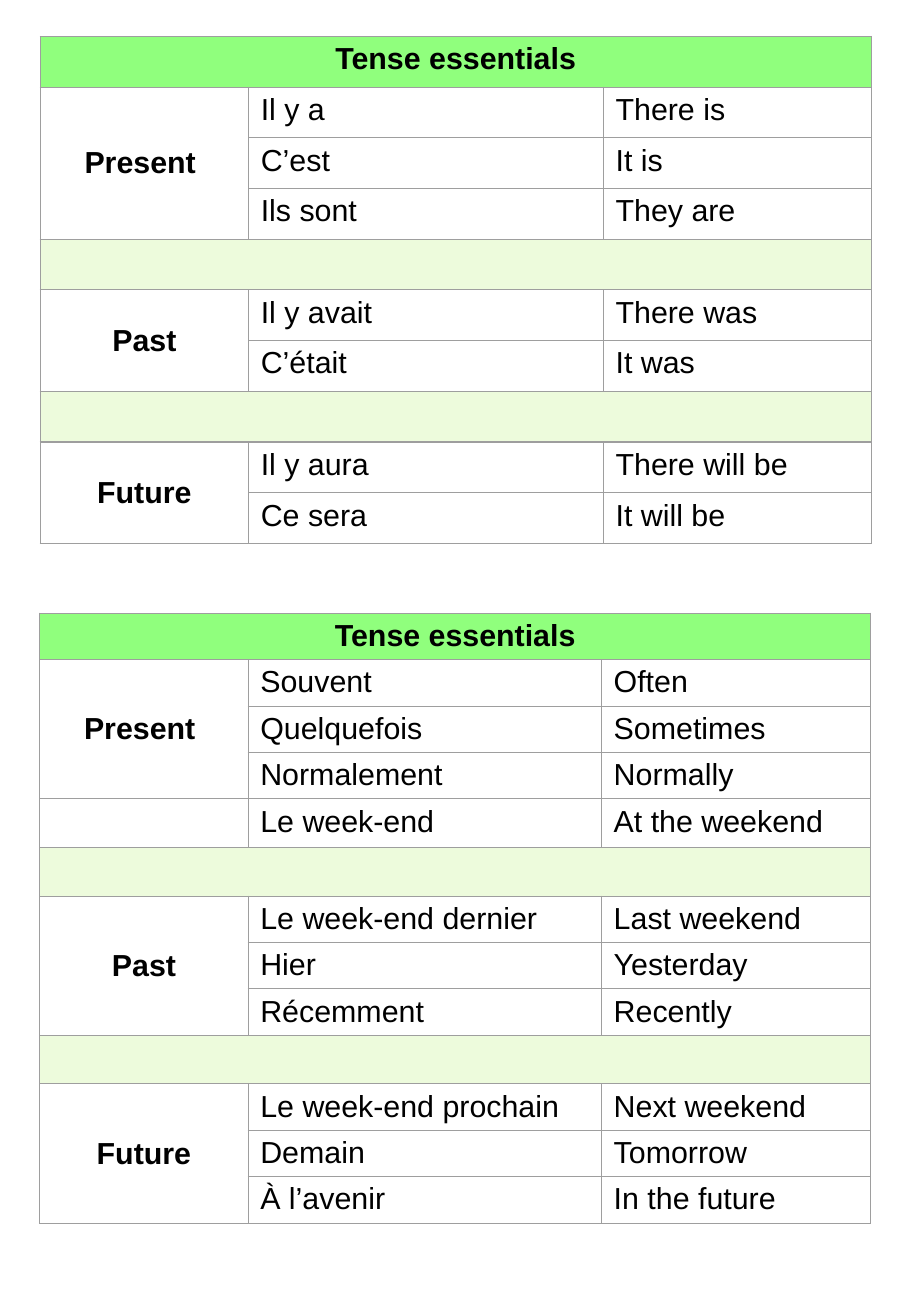
from lxml.etree import SubElement
from pptx import Presentation
from pptx.dml.color import RGBColor
from pptx.enum.text import MSO_ANCHOR, PP_ALIGN
from pptx.oxml.ns import qn
from pptx.util import Cm, Pt

COLORS = {"heading": "90FF7D", "separator": "EDFBDC", "border": "9E9E9E", "text": "000000"}
FONT = {"name": "Arial", "size": Pt(18)}
MARGINS = {"margin_top": Cm(0.12), "margin_bottom": Cm(0.12)}
PLAIN_TABLE = {"first_row": False, "horz_banding": False}
HEADING = "Tense essentials"
SEPARATOR = None

VERBS = [
    ("Present ", [("Il y a", "There is"), ("C’est", "It is"), ("Ils sont", "They are")]),
    SEPARATOR,
    ("Past", [("Il y avait", "There was"), ("C’était", "It was")]),
    SEPARATOR,
    ("Future", [("Il y aura", "There will be"), ("Ce sera", "It will be")]),
]
TIME_PHRASES = [
    ("Present ", [("Souvent", "Often"), ("Quelquefois", "Sometimes"), ("Normalement", "Normally")]),
    ("", [("Le week-end", "At the weekend")]),
    SEPARATOR,
    ("Past", [("Le week-end dernier", "Last weekend"), ("Hier", "Yesterday"), ("Récemment", "Recently")]),
    SEPARATOR,
    ("Future", [("Le week-end prochain", "Next weekend"), ("Demain", "Tomorrow"), ("À l’avenir", "In the future")]),
]


def set_values(target, values):
    for name, value in values.items():
        setattr(target, name, value)


def prepare_cell(cell):
    properties = cell._tc.get_or_add_tcPr()
    for side in ("a:lnL", "a:lnR", "a:lnT", "a:lnB"):
        line = SubElement(properties, qn(side), w=str(Pt(0.75)))
        SubElement(SubElement(line, qn("a:solidFill")), qn("a:srgbClr"), val=COLORS["border"])
    cell.fill.background()
    set_values(cell, MARGINS)


def fill_cell(cell, color):
    cell.fill.solid()
    cell.fill.fore_color.rgb = RGBColor.from_string(COLORS[color])


def write_cell(cell, text, bold=False, alignment=PP_ALIGN.LEFT):
    if not text:
        return
    paragraph = cell.text_frame.paragraphs[0]
    paragraph.alignment = alignment
    run = paragraph.add_run()
    run.text = text
    set_values(run.font, {**FONT, "bold": bold})
    run.font.color.rgb = RGBColor.from_string(COLORS["text"])


def add_tense_table(slide, left, top, column_widths, row_height, groups):
    row_count = 1 + sum(1 if group is SEPARATOR else len(group[1]) for group in groups)
    shape = slide.shapes.add_table(
        row_count, len(column_widths), Cm(left), Cm(top), Cm(sum(column_widths)), Cm(row_height * row_count)
    )
    table = shape.table
    set_values(table, PLAIN_TABLE)
    for column, width in zip(table.columns, column_widths):
        column.width = Cm(width)
    for row in table.rows:
        row.height = Cm(row_height)
    for cell in table.iter_cells():
        prepare_cell(cell)

    heading = table.cell(0, 0)
    heading.merge(table.cell(0, 2))
    fill_cell(heading, "heading")
    write_cell(heading, HEADING, True, PP_ALIGN.CENTER)

    first = 1
    for group in groups:
        label_cell = table.cell(first, 0)
        if group is SEPARATOR:
            label_cell.merge(table.cell(first, 2))
            fill_cell(label_cell, "separator")
            first += 1
            continue
        label, phrases = group
        if len(phrases) > 1:
            label_cell.merge(table.cell(first + len(phrases) - 1, 0))
        label_cell.vertical_anchor = MSO_ANCHOR.MIDDLE
        write_cell(label_cell, label, True, PP_ALIGN.CENTER)
        for row, phrase in enumerate(phrases, first):
            for column, text in enumerate(phrase, 1):
                write_cell(table.cell(row, column), text)
        first += len(phrases)


def main():
    presentation = Presentation()
    presentation.slide_width = Cm(19.05)
    presentation.slide_height = Cm(27.51)
    slide = presentation.slides.add_slide(presentation.slide_layouts[6])
    add_tense_table(slide, 0.84, 0.76, (4.36, 7.42, 5.6), 1.06, VERBS)
    add_tense_table(slide, 0.83, 12.82, (4.36, 7.39, 5.63), 0.97, TIME_PHRASES)
    presentation.save("out.pptx")


if __name__ == "__main__":
    main()
